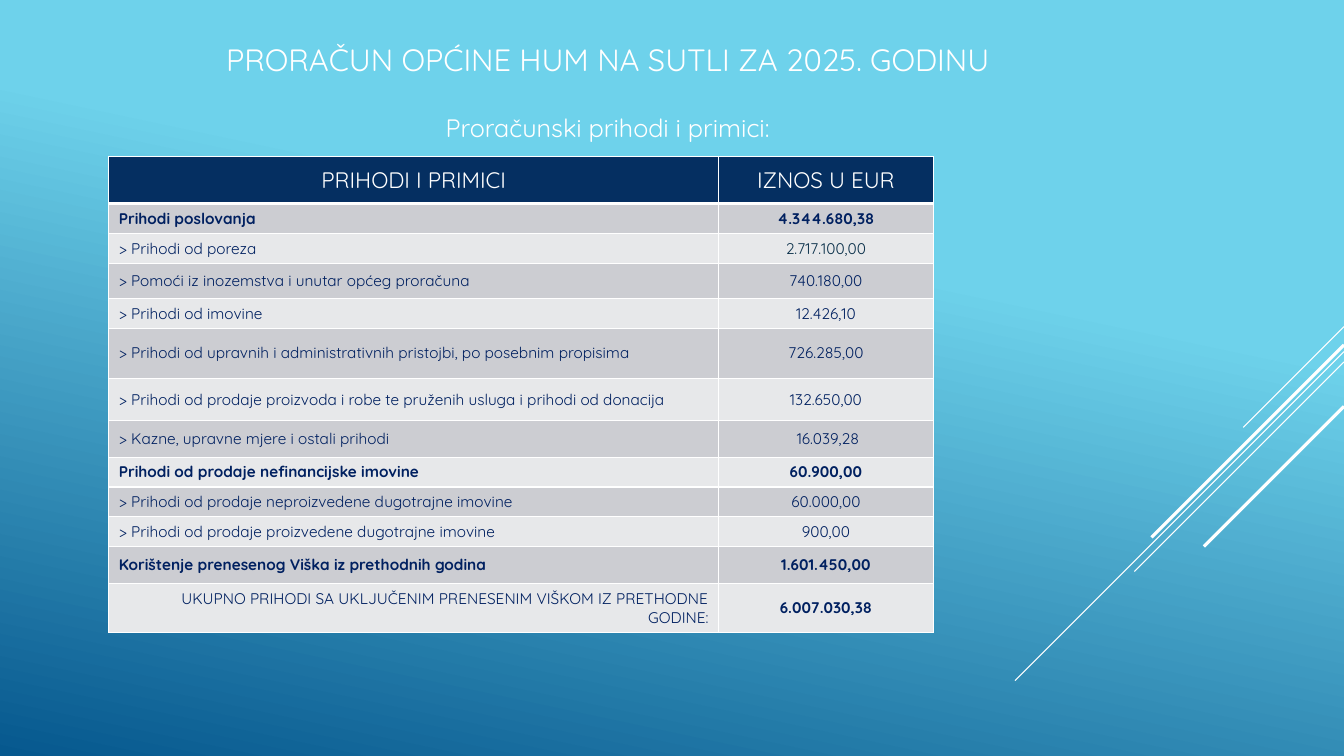
from lxml import etree
from pptx import Presentation
from pptx.dml.color import RGBColor
from pptx.enum.shapes import MSO_CONNECTOR
from pptx.enum.text import MSO_ANCHOR, MSO_AUTO_SIZE, PP_ALIGN
from pptx.oxml import parse_xml
from pptx.oxml.ns import nsdecls, qn
from pptx.util import Cm, Pt

STRAIGHT = MSO_CONNECTOR.STRAIGHT
MIDDLE = MSO_ANCHOR.MIDDLE
NO_FIT = MSO_AUTO_SIZE.NONE
LEFT, CENTER, RIGHT = PP_ALIGN.LEFT, PP_ALIGN.CENTER, PP_ALIGN.RIGHT

WHITE, NAVY, INK, SLATE = "FFFFFF", "052F61", "002060", "0A304A"
BANDS = ("CCCDD2", "E7E8EA")
SLIDE_WIDTH = 33.87

TITLE_LINES = [
    ("PRORAČUN OPĆINE HUM NA SUTLI ZA 2025. GODINU", 22, 0),
    ("Proračunski prihodi i primici:", 18, 25),
]

RAYS = [
    (8.23, 10.77, 0.75),
    (8.86, 17.15, 0.75),
    (9.12, 14.4, 0.75),
    (8.69, 13.54, 2.25),
    (10.24, 13.77, 2.25),
]

COLUMNS = (15.37, 5.41)
HEADER = ("PRIHODI I PRIMICI", "IZNOS U EUR", 1.19)
BUDGET = [
    ("Prihodi poslovanja", "4.344.680,38", 0.75),
    ("> Prihodi od poreza", "2.717.100,00", 0.75),
    ("> Pomoći iz inozemstva i unutar općeg proračuna", "740.180,00", 0.89),
    ("> Prihodi od imovine", "12.426,10", 0.75),
    ("> Prihodi od upravnih i administrativnih pristojbi, po posebnim propisima", "726.285,00", 1.26),
    ("> Prihodi od prodaje proizvoda i robe te pruženih usluga i prihodi od donacija", "132.650,00", 1.07),
    ("> Kazne, upravne mjere i ostali prihodi", " 16.039,28", 0.92),
    ("Prihodi od prodaje nefinancijske imovine", "60.900,00", 0.75),
    ("> Prihodi od prodaje neproizvedene dugotrajne imovine", "60.000,00", 0.75),
    ("> Prihodi od prodaje proizvedene dugotrajne imovine", "900,00", 0.75),
    ("Korištenje prenesenog Viška iz prethodnih godina", "1.601.450,00", 0.93),
    ("UKUPNO PRIHODI SA UKLJUČENIM PRENESENIM VIŠKOM IZ PRETHODNE GODINE:", "6.007.030,38", 1.24),
]


def colour(code):
    return RGBColor.from_string(code)


class SlideBuilder:
    font = "Quicksand"

    def __init__(self, deck):
        self.page = deck.slides.add_slide(deck.slide_layouts[5])

    def background(self, stops, angle):
        fill = self.page.background.fill
        fill.gradient()
        fill.gradient_angle = angle
        for stop, (position, code) in zip(fill.gradient_stops, stops):
            stop.position = position
            stop.color.rgb = colour(code)

    def label(self, para, text, size, code, align, bold=False):
        para.alignment = align
        span = para.add_run()
        span.text = text
        formats = {"name": self.font, "size": Pt(size), "bold": bold}
        for key, value in formats.items():
            setattr(span.font, key, value)
        span.font.color.rgb = colour(code)

    def title(self, lines, left, top, width, height):
        box = self.page.shapes.title
        place = {"left": left, "top": top, "width": width, "height": height}
        for key, value in place.items():
            setattr(box, key, Cm(value))
        frame = box.text_frame
        formats = {"word_wrap": True, "auto_size": NO_FIT, "vertical_anchor": MIDDLE}
        for key, value in formats.items():
            setattr(frame, key, value)
        for index, (text, size, gap) in enumerate(lines):
            para = frame.add_paragraph() if index else frame.paragraphs[0]
            para.space_before = Pt(gap)
            self.label(para, text, size, WHITE, CENTER)

    def ray(self, start, end, weight):
        line = self.page.shapes.add_connector(
            STRAIGHT, Cm(SLIDE_WIDTH), Cm(start), Cm(SLIDE_WIDTH - (end - start)), Cm(end))
        line.line.color.rgb = colour(WHITE)
        line.line.width = Pt(weight)
        etree.SubElement(line._element.spPr, qn("a:effectLst"))

    def borders(self, cell, top, bottom):
        properties = cell._tc.get_or_add_tcPr()
        for side, weight in (("L", 1), ("R", 1), ("T", top), ("B", bottom)):
            properties.append(parse_xml(
                f'<a:ln{side} {nsdecls("a")} w="{Pt(weight)}"><a:solidFill>'
                f'<a:srgbClr val="{WHITE}"/></a:solidFill></a:ln{side}>'))

    def cell(self, cell, text, fill, top, bottom, **style):
        self.borders(cell, top, bottom)
        cell.fill.solid()
        cell.fill.fore_color.rgb = colour(fill)
        cell.vertical_anchor = MIDDLE
        self.label(cell.text_frame.paragraphs[0], text, **style)

    def table(self, header, rows, left, top):
        entries = [header, *rows]
        height = sum(entry[2] for entry in entries)
        table = self.page.shapes.add_table(
            len(entries), len(COLUMNS), Cm(left), Cm(top), Cm(sum(COLUMNS)), Cm(height)).table
        for column, width in zip(table.columns, COLUMNS):
            column.width = Cm(width)
        last = len(entries) - 1
        for index, (source, amount, row_height) in enumerate(entries):
            table.rows[index].height = Cm(row_height)
            heading = index == 0
            section = not heading and index != last and not source.startswith(">")
            fill = NAVY if heading else BANDS[(index - 1) % 2]
            edges = {"top": 3 if index == 1 else 1, "bottom": 3 if heading else 1}
            base = {"size": 16 if heading else 11, "code": WHITE if heading else INK}
            align = CENTER if heading else RIGHT if index == last else LEFT
            self.cell(table.cell(index, 0), source, fill, **edges, **base, align=align, bold=section)
            if index == 2:
                base["code"] = SLATE
            self.cell(table.cell(index, 1), amount, fill, **edges, **base,
                      align=CENTER, bold=section or index == last)


def main():
    deck = Presentation()
    deck.slide_width, deck.slide_height = Cm(SLIDE_WIDTH), Cm(19.05)
    slide = SlideBuilder(deck)
    slide.background([(0.35, "6ED2EB"), (1, "06588E")], 258)
    for start, end, weight in RAYS:
        slide.ray(start, end, weight)
    slide.title(TITLE_LINES, 1.88, 0.41, 26.87, 3.81)
    slide.table(HEADER, BUDGET, 2.74, 3.94)
    deck.save("out.pptx")


if __name__ == "__main__":
    main()
